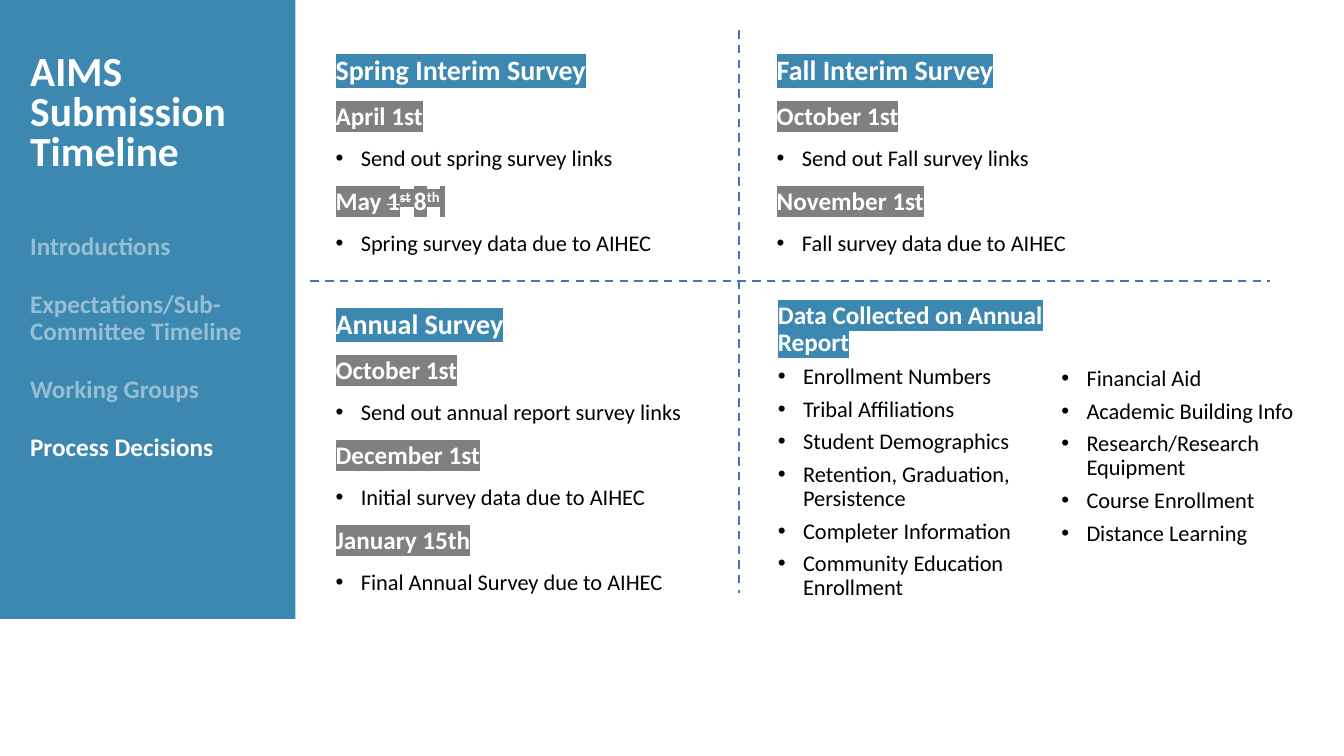
from lxml import etree
from pptx import Presentation
from pptx import util as u
from pptx.dml.color import RGBColor
from pptx.enum import dml, shapes, text
from pptx.oxml.ns import qn

COLOURS = {"blue": "3D88B0", "grey": "808080", "white": "FFFFFF", "black": "000000", "rule": "4472C4"}
STYLES = {
    "title": {"size": 29.6, "bold": True, "colour": "white", "line": 0.8},
    "heading": {"size": 20, "bold": True, "colour": "white", "mark": "blue", "before": 12},
    "small heading": {"size": 18, "bold": True, "colour": "white", "mark": "blue", "before": 12},
    "date": {"size": 18, "bold": True, "colour": "white", "mark": "grey", "before": 12},
    "task": {"size": 16, "colour": "black", "bullet": True, "before": 12},
    "item": {"size": 16, "colour": "black", "bullet": True, "before": 6},
    "faded": {"size": 18, "bold": True, "colour": "white", "opacity": 45, "before": 10, "after": 12},
    "current": {"size": 18, "bold": True, "colour": "white", "before": 10, "after": 12},
}
MAY = [("May ", {}), ("1", {"strike": "sngStrike"}),
       ("st", {"strike": "sngStrike", "baseline": "30000"}), (" ", {"baseline": "30000"}),
       ("8", {}), ("th", {"baseline": "30000"}), (" ", {})]
INTERIM = [
    ("heading", "Spring Interim Survey"),
    ("date", "April 1st"), ("task", "Send out spring survey links"),
    ("date", MAY), ("task", "Spring survey data due to AIHEC"),
    ("heading", "Fall Interim Survey"),
    ("date", "October 1st"), ("task", "Send out Fall survey links"),
    ("date", "November 1st"), ("task", "Fall survey data due to AIHEC"),
]
ANNUAL = [
    ("heading", "Annual Survey"),
    ("date", "October 1st"), ("task", "Send out annual report survey links"),
    ("date", "December 1st"), ("task", "Initial survey data due to AIHEC"),
    ("date", "January 15th"), ("task", "Final Annual Survey due to AIHEC"),
]
COLLECTED = [("small heading", "Data Collected on Annual Report")] + [("item", name) for name in (
    "Enrollment Numbers", "Tribal Affiliations", "Student Demographics",
    "Retention, Graduation, Persistence", "Completer Information", "Community Education Enrollment")]
COLLECTED_MORE = [("item", name) for name in (
    "Financial Aid", "Academic Building Info", "Research/Research Equipment",
    "Course Enrollment", "Distance Learning")]
AGENDA = [("faded", "Introductions"), ("faded", "Expectations/Sub-Committee Timeline"),
          ("faded", "Working Groups"), ("current", "Process Decisions")]


class SlideBuilder:
    """Holds the font, the colours and the current page."""

    def __init__(self, page, font="Calibri"):
        self.page = page
        self.font = font

    def colour(self, name):
        return RGBColor.from_string(COLOURS[name])

    def panel(self, left, top, width, height, fill):
        box = self.page.shapes.add_shape(
            shapes.MSO_SHAPE.RECTANGLE, *map(u.Pt, (left, top, width, height)))
        box.shadow.inherit = False
        box.fill.solid()
        box.fill.fore_color.rgb = self.colour(fill)
        box.line.fill.background()

    def title(self, left, top, width, height, words):
        box = self.page.shapes.title
        box._element.getparent().append(box._element)
        places = {"left": left, "top": top, "width": width, "height": height}
        for name, value in places.items():
            setattr(box, name, u.Pt(value))
        self.fill_frame(box.text_frame, [("title", words)], text.MSO_ANCHOR.MIDDLE)

    def text_box(self, left, top, width, height, lines, columns=1):
        box = self.page.shapes.add_textbox(*map(u.Pt, (left, top, width, height)))
        self.fill_frame(box.text_frame, lines, text.MSO_ANCHOR.TOP)
        if columns > 1:
            box.text_frame._txBody.bodyPr.set("numCol", str(columns))

    def fill_frame(self, frame, lines, anchor):
        settings = {"word_wrap": True, "auto_size": text.MSO_AUTO_SIZE.NONE, "vertical_anchor": anchor}
        for name, value in settings.items():
            setattr(frame, name, value)
        for index, (style_name, content) in enumerate(lines):
            style = STYLES[style_name]
            para = frame.add_paragraph() if index else frame.paragraphs[0]
            if style.get("bullet"):
                self.bullet(para)
            settings = {"alignment": text.PP_ALIGN.LEFT, "line_spacing": style.get("line", 0.9),
                        "space_before": u.Pt(style.get("before", 0) if index else 0),
                        "space_after": u.Pt(style.get("after", 0))}
            for name, value in settings.items():
                setattr(para, name, value)
            for words, extras in [(content, {})] if isinstance(content, str) else content:
                self.span(para, words, style, extras)

    def bullet(self, para):
        properties = para._p.get_or_add_pPr()
        properties.set("marL", str(u.Pt(18)))
        properties.set("indent", str(u.Pt(-18)))
        etree.SubElement(properties, qn("a:buFont"), typeface="Arial")
        etree.SubElement(properties, qn("a:buChar"), char="•")

    def span(self, para, words, style, extras):
        span = para.add_run()
        span.text = words
        settings = {"name": self.font, "size": u.Pt(style["size"]), "bold": style.get("bold", False)}
        for name, value in settings.items():
            setattr(span.font, name, value)
        span.font.color.rgb = self.colour(style["colour"])
        properties = span._r.get_or_add_rPr()
        fill = properties.find(qn("a:solidFill"))
        if "opacity" in style:
            etree.SubElement(fill[0], qn("a:alpha"), val=str(style["opacity"] * 1000))
        if "mark" in style:
            mark = etree.Element(qn("a:highlight"))
            etree.SubElement(mark, qn("a:srgbClr"), val=COLOURS[style["mark"]])
            fill.addnext(mark)
        for name, value in extras.items():
            properties.set(name, value)

    def divider(self, *ends):
        line = self.page.shapes.add_connector(shapes.MSO_CONNECTOR.STRAIGHT, *map(u.Pt, ends))
        line.line.color.rgb = self.colour("rule")
        line.line.width = u.Pt(1.5)
        line.line.dash_style = dml.MSO_LINE.DASH
        etree.SubElement(line._element.spPr, qn("a:effectLst"))


def main():
    deck = Presentation()
    deck.slide_width, deck.slide_height = u.Pt(960), u.Pt(540)
    builder = SlideBuilder(deck.slides.add_slide(deck.slide_layouts[5]))
    builder.panel(0, 0, 211, 442, "blue")
    builder.title(14.4, 29.5, 183.6, 104.4, "AIMS Submission Timeline")
    builder.text_box(232.6, 36.7, 644.4, 164.2, INTERIM, columns=2)
    builder.text_box(232.6, 218.2, 287.3, 223.9, ANNUAL)
    builder.text_box(548.6, 212.4, 216.8, 223.9, COLLECTED)
    builder.text_box(751, 258.8, 209, 177.5, COLLECTED_MORE)
    builder.text_box(14.4, 163.4, 183.6, 259.9, AGENDA)
    builder.divider(221.8, 200.9, 907.2, 200.9)
    builder.divider(527.8, 21.6, 527.8, 423.4)
    deck.save("out.pptx")


if __name__ == "__main__":
    main()
